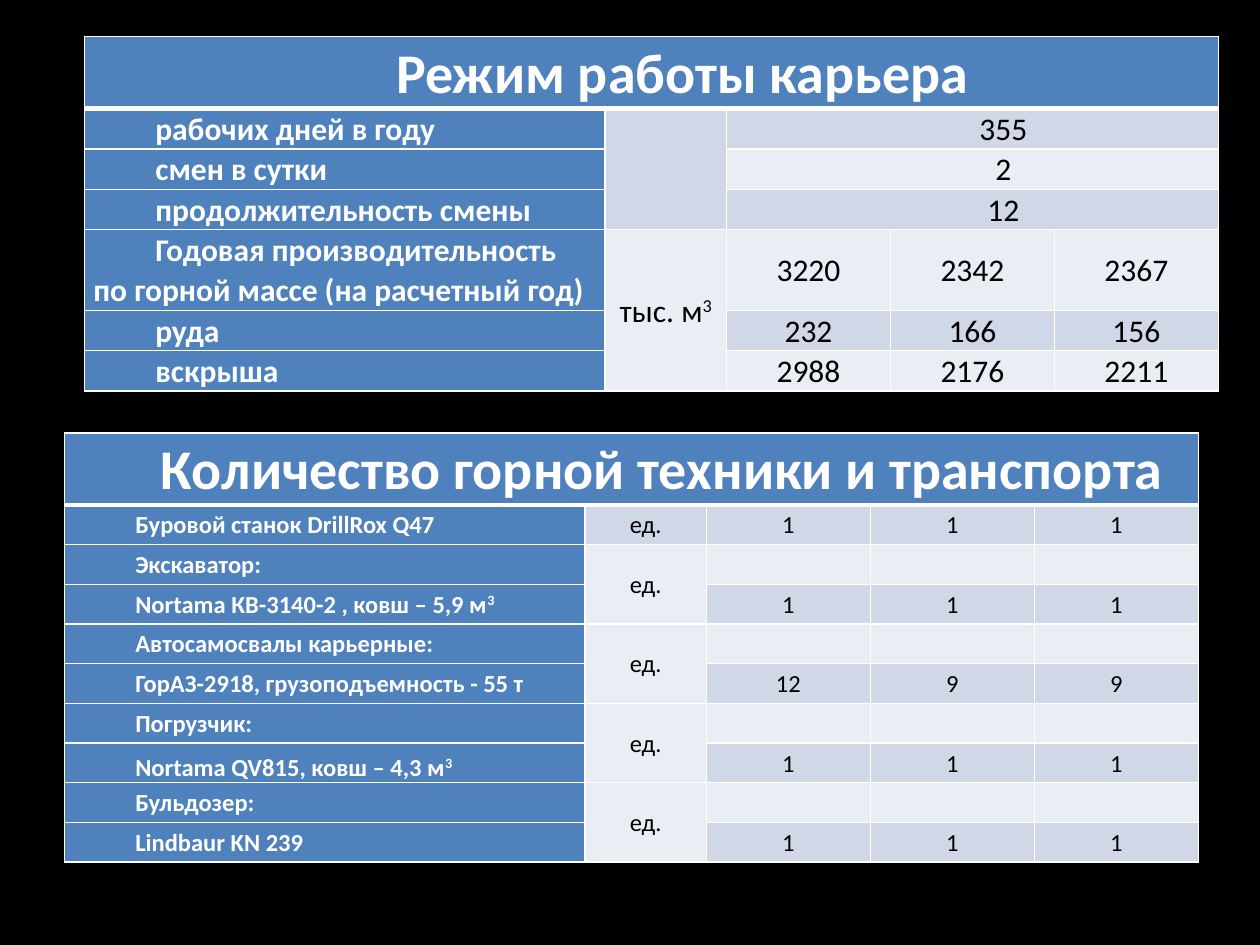
from lxml.etree import SubElement
from pptx import Presentation
from pptx.dml.color import RGBColor
from pptx.enum.text import MSO_ANCHOR, PP_ALIGN
from pptx.oxml.ns import qn
from pptx.util import Pt

COLORS = {"background": "000000", "header": "4F81BD", "odd": "D0D8E8",
          "even": "E9EDF4", "light": "FFFFFF", "dark": "000000"}
FONT = "Calibri"
COLUMN_WIDTHS = [297.4, 69.4, 93.7, 93.7, 93.7]
FIRST_LINE_INDENT = 35.4
LINE_SPACING = 1.05
TITLE_HEIGHT = 41
TITLE_SIZE = 32
TITLE_RULE = 3

# Content: label, unit, values; a single value spans all value columns,
# a unit of None continues the unit cell above, "^" starts a superscript
TABLES = [
    {"title": "Режим работы карьера",
     "left": 48.4, "top": 20.9, "size": 18, "row_height": 23,
     "tall_rows": {4: 46}, "bottom_rows": [],
     "rows": [
         ("рабочих дней в году", "", ["355"]),
         ("смен в сутки", None, ["2"]),
         ("продолжительность смены", None, ["12"]),
         ("Годовая производительность по горной массе (на расчетный год)",
          "тыс. м^3", ["3220", "2342", "2367"]),
         ("руда", None, ["232", "166", "156"]),
         ("вскрыша", None, ["2988", "2176", "2211"]),
     ]},
    {"title": "Количество горной техники и транспорта",
     "left": 36.9, "top": 247.4, "size": 14, "row_height": 22.7,
     "tall_rows": {}, "bottom_rows": [7],
     "rows": [
         ("Буровой станок DrillRox Q47", "ед.", ["1", "1", "1"]),
         ("Экскаватор:", "ед.", ["", "", ""]),
         ("Nortama КВ-3140-2 , ковш – 5,9 м^3", None, ["1", "1", "1"]),
         ("Автосамосвалы карьерные:", "ед.", ["", "", ""]),
         ("ГорАЗ-2918, грузоподъемность - 55 т", None, ["12", "9", "9"]),
         ("Погрузчик:", "ед.", ["", "", ""]),
         ("Nortama QV815, ковш – 4,3 м^3", None, ["1", "1", "1"]),
         ("Бульдозер:", "ед.", ["", "", ""]),
         ("Lindbaur KN 239", None, ["1", "1", "1"]),
     ]},
]


def rgb(name):
    return RGBColor.from_string(COLORS[name])


def fill_cell(cell, text, fill, size, heading=False, centred=True, indented=False):
    cell.fill.solid()
    cell.fill.fore_color.rgb = rgb(fill)
    cell.margin_left = cell.margin_right = Pt(5)
    cell.margin_top = cell.margin_bottom = 0
    cell.vertical_anchor = MSO_ANCHOR.MIDDLE

    paragraph = cell.text_frame.paragraphs[0]
    paragraph.alignment = PP_ALIGN.CENTER if centred else PP_ALIGN.LEFT
    paragraph.line_spacing = LINE_SPACING
    paragraph.font.name = FONT
    paragraph.font.size = Pt(size)
    paragraph.font.bold = heading
    paragraph.font.color.rgb = rgb("light" if heading else "dark")
    if indented:
        properties = paragraph._p.get_or_add_pPr()
        properties.set("marL", "0")
        properties.set("indent", str(Pt(FIRST_LINE_INDENT)))

    base, _, superscript = text.partition("^")
    if base:
        paragraph.add_run().text = base
    if superscript:
        run = paragraph.add_run()
        run.text = superscript
        run.font._element.set("baseline", "30000")


def add_bottom_rule(cell, width):
    properties = cell._tc.get_or_add_tcPr()
    line = SubElement(properties, qn("a:lnB"), w=str(Pt(width)))
    color_fill = SubElement(line, qn("a:solidFill"))
    SubElement(color_fill, qn("a:srgbClr"), val=COLORS["light"])
    properties.insert(0, line)  # borders precede the cell fill


def add_data_table(slide, data):
    rows, size = data["rows"], data["size"]
    heights = [TITLE_HEIGHT] + [data["tall_rows"].get(number, data["row_height"])
                                for number in range(1, len(rows) + 1)]
    # The default table style supplies the thin white rules
    table = slide.shapes.add_table(
        len(heights), len(COLUMN_WIDTHS), Pt(data["left"]), Pt(data["top"]),
        Pt(sum(COLUMN_WIDTHS)), Pt(sum(heights))).table
    table.first_col = True
    for column, width in zip(table.columns, COLUMN_WIDTHS):
        column.width = Pt(width)
    for row, height in zip(table.rows, heights):
        row.height = Pt(height)

    # Title row
    last_column = len(COLUMN_WIDTHS) - 1
    table.cell(0, 0).merge(table.cell(0, last_column))
    fill_cell(table.cell(0, 0), data["title"], "header", TITLE_SIZE,
              heading=True, indented=True)
    for cell in table.rows[0].cells:
        add_bottom_rule(cell, TITLE_RULE)

    # Labels, units and values
    unit_starts = [number for number, row in enumerate(rows, 1) if row[1] is not None]
    unit_ends = [start - 1 for start in unit_starts[1:]] + [len(rows)]
    for number, (label, unit, values) in enumerate(rows, 1):
        band = "odd" if number % 2 else "even"
        spanning = len(values) == 1
        fill_cell(table.cell(number, 0), label, "header", size,
                  heading=True, centred=False, indented=True)
        fill_cell(table.cell(number, 1), unit or "", band, size)
        if spanning:
            table.cell(number, 2).merge(table.cell(number, last_column))
        for column, value in enumerate(values, 2):
            fill_cell(table.cell(number, column), value, band, size, indented=spanning)
    for start, end in zip(unit_starts, unit_ends):
        if end > start:
            table.cell(start, 1).merge(table.cell(end, 1))
    for number in data["bottom_rows"]:
        table.cell(number, 0).vertical_anchor = MSO_ANCHOR.BOTTOM


def main():
    presentation = Presentation()
    presentation.slide_width, presentation.slide_height = Pt(720), Pt(540)
    slide = presentation.slides.add_slide(presentation.slide_layouts[6])
    slide.background.fill.solid()
    slide.background.fill.fore_color.rgb = rgb("background")
    for data in TABLES:
        add_data_table(slide, data)
    presentation.save("out.pptx")


if __name__ == "__main__":
    main()
